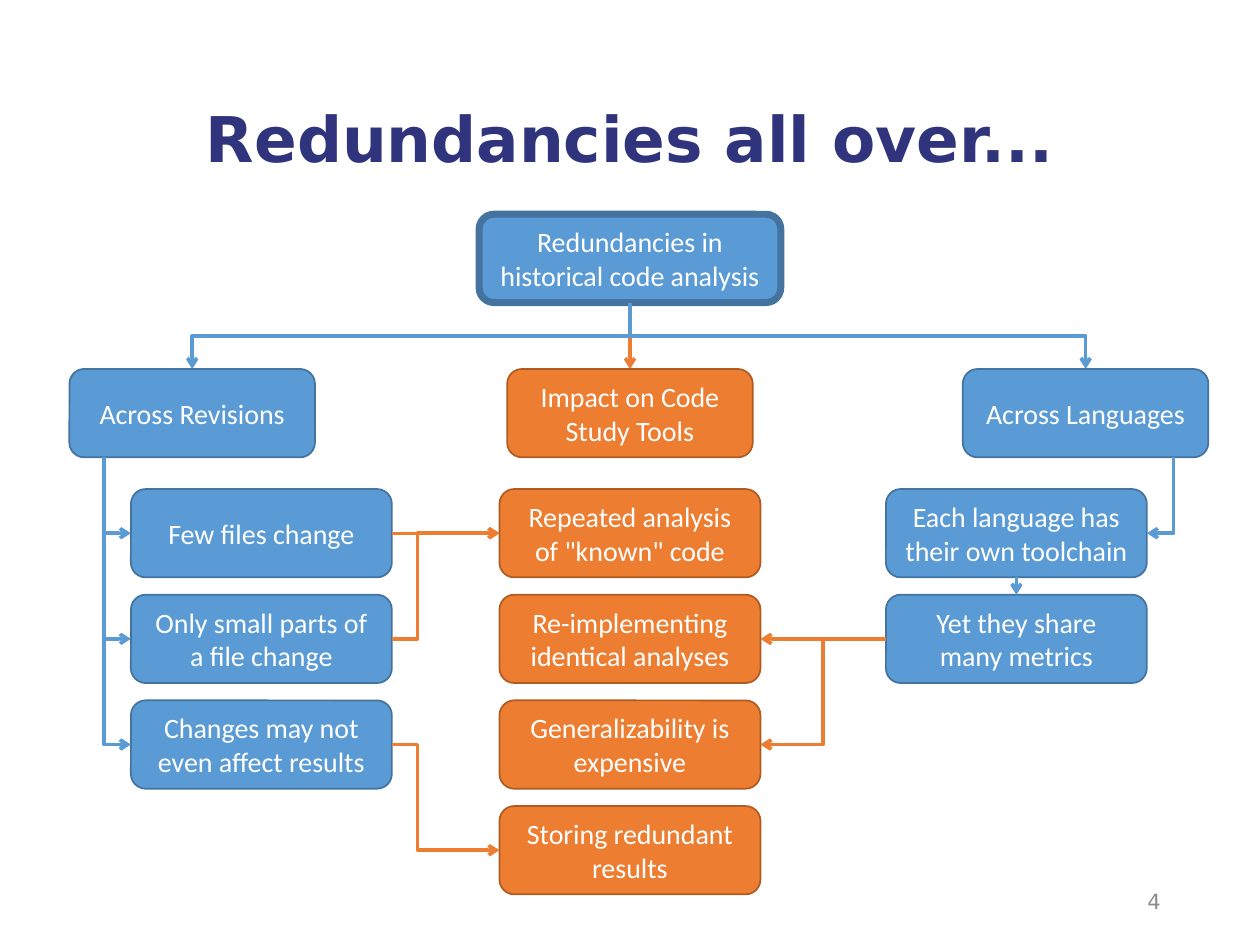
import pptx
import pptx.util
import pptx.dml.color
import pptx.enum.shapes
import pptx.enum.text
import pptx.oxml
import lxml.etree

Cm, Pt = pptx.util.Cm, pptx.util.Pt
RGBColor = pptx.dml.color.RGBColor
Align, Anchor = pptx.enum.text.PP_ALIGN, pptx.enum.text.MSO_ANCHOR
Kind = pptx.enum.shapes.MSO_CONNECTOR
ROUND = pptx.enum.shapes.MSO_SHAPE.ROUNDED_RECTANGLE

BLUE, NAVY = RGBColor(0x5B, 0x9B, 0xD5), RGBColor(0x43, 0x73, 0x9E)
ORANGE, RUST = RGBColor(0xED, 0x7D, 0x31), RGBColor(0xAF, 0x5C, 0x24)
INK, GREY = RGBColor(0x2F, 0x34, 0x7D), RGBColor(0x8C, 0x8C, 0x8C)
WHITE = RGBColor(0xFF, 0xFF, 0xFF)

HIGH, WIDE, HEAD = 1.78, 5.26, 4.95
FIRST, STEP = 2.42, 2.13
TOP = 7.44


def write(shape, text, size, font, color, align, bold=False):
    """Fill a shape with one centred-height run of text."""
    frame = shape.text_frame
    frame.word_wrap = True
    frame.vertical_anchor = Anchor.MIDDLE
    para = frame.paragraphs[0]
    para.alignment = align
    run = para.add_run()
    run.text = text
    run.font.size, run.font.name, run.font.bold = Pt(size), font, bold
    run.font.color.rgb = color
    return para


def label(shapes, box, *style, **more):
    """Place a plain text box."""
    return write(shapes.add_textbox(*map(Cm, box)), *style, **more)


def node(shapes, box, text, fill, edge, width=1):
    """Place one rounded box with its text."""
    shape = shapes.add_shape(ROUND, *map(Cm, box))
    shape.shadow.inherit = False
    shape.fill.solid()
    shape.fill.fore_color.rgb = fill
    shape.line.color.rgb = edge
    shape.line.width = Pt(width)
    write(shape, text, 16, "Calibri", WHITE, Align.CENTER)


def finish(link, color):
    """Give a connector its colour, arrowhead and flat look."""
    link.line.color.rgb = color
    link.line.width = Pt(2)
    tail = pptx.oxml.parse_xml(
        '<a:tailEnd xmlns:a="http://schemas.openxmlformats.org/'
        'drawingml/2006/main" type="arrow"/>')
    link.line._get_or_add_ln().append(tail)
    lxml.etree.SubElement(link.element.spPr, pptx.oxml.ns.qn("a:effectLst"))


def arrow(shapes, start, end, color):
    """Draw a straight arrow."""
    finish(shapes.add_connector(Kind.STRAIGHT, *map(Cm, start + end)), color)


def across(shapes, start, end, color, bend=0.5):
    """Draw an elbow arrow that leaves sideways."""
    link = shapes.add_connector(Kind.ELBOW, *map(Cm, start + end))
    guide = lxml.etree.SubElement(
        link.element.spPr.prstGeom.avLst, pptx.oxml.ns.qn("a:gd"))
    guide.set("name", "adj1")
    guide.set("fmla", f"val {round(bend * 100000)}")
    finish(link, color)


def down(shapes, start, end, color, single=False):
    """Draw an elbow arrow that leaves downwards, with one or two bends."""
    (ax, ay), (bx, by) = start, end
    midx, midy = (ax + bx) / 2, (ay + by) / 2
    half, rise = (by - ay) / 2, abs(bx - ax) / 2
    side = 1 if bx < ax else -1
    link = shapes.add_connector(
        Kind.ELBOW, Cm(midx - side * half), Cm(midy - rise),
        Cm(midx + side * half), Cm(midy + rise))
    geom = link.element.spPr
    geom.xfrm.set("rot", str((90 if side > 0 else 270) * 60000))
    if single:
        geom.prstGeom.set("prst", "bentConnector2")
    finish(link, color)


def column(shapes, box, head, items, shift, fill, edge):
    """Place a heading and its items; shift is 0 left, 0.5 centre, 1 right."""
    left, top, width = box
    place = left + shift * (width - HEAD)
    node(shapes, (place, top, HEAD, HIGH), head, fill, edge)
    inner = left + (1 - shift) * (width - WIDE)
    for i, text in enumerate(items):
        spot = (inner, top + FIRST + i * STEP, WIDE, HIGH)
        node(shapes, spot, text, fill, edge)


def trunk(shapes, box, ends):
    """Place the root box and its arrows to the three headings."""
    left, top, width, high = box
    node(shapes, box, "Redundancies in historical code analysis", BLUE, NAVY, 4)
    start = (left + width / 2, top + high)
    arrow(shapes, start, (start[0], TOP), ORANGE)
    for end in ends:
        down(shapes, start, (end, TOP), BLUE)


def stems(shapes, start, edge, rows):
    """Draw arrows from a heading down to the edge of its items."""
    for row in rows:
        down(shapes, start, (edge, row), BLUE, single=True)


def effects(shapes, left, mid, right, rows):
    """Draw the orange arrows into the middle column."""
    out, back = left + WIDE, mid + WIDE
    arrow(shapes, (out, rows[0]), (mid, rows[0]), ORANGE)
    across(shapes, (out, rows[1]), (mid, rows[0]), ORANGE, 0.24)
    across(shapes, (out, rows[2]), (mid, rows[3]), ORANGE, 0.24)
    arrow(shapes, (right, rows[1]), (back, rows[1]), ORANGE)
    across(shapes, (right, rows[1]), (back, rows[2]), ORANGE)


def main():
    """Build and save the slide."""
    deck = pptx.Presentation()
    deck.slide_width, deck.slide_height = Cm(25.4), Cm(19.05)
    shapes = deck.slides.add_slide(deck.slide_layouts[6]).shapes
    title = label(shapes, (1.75, 1.02, 21.9, 3.68), "Redundancies all over...",
                  36, "DejaVu Sans", INK, Align.CENTER, bold=True)
    title.line_spacing = 0.9

    span = 6.5
    west, mid, east = 1.4, 10.07, 17.86
    rows = [TOP + FIRST + HIGH / 2 + i * STEP for i in range(4)]
    base = TOP + HIGH
    trunk(shapes, (9.66, 4.32, 6.08, HIGH),
          (west + HEAD / 2, east + span - HEAD / 2))
    column(shapes, (west, TOP, span), "Across Revisions",
           ("Few files change", "Only small parts of a file change",
            "Changes may not even affect results"), 0, BLUE, NAVY)
    column(shapes, (mid, TOP, WIDE), "Impact on Code Study Tools",
           ("Repeated analysis of \"known\" code",
            "Re-implementing identical analyses",
            "Generalizability is expensive",
            "Storing redundant results"), 0.5, ORANGE, RUST)
    column(shapes, (east, TOP, span), "Across Languages",
           ("Each language has their own toolchain",
            "Yet they share many metrics"), 1, BLUE, NAVY)

    inner = west + span - WIDE
    stems(shapes, (west + 0.7, base), inner, rows[:3])
    stems(shapes, (east + span - 0.7, base), east + WIDE, rows[:1])
    center, half = east + WIDE / 2, HIGH / 2
    arrow(shapes, (center, rows[0] + half), (center, rows[1] - half), BLUE)
    effects(shapes, inner, mid, east, rows)
    label(shapes, (17.93, 17.65, 5.72, 1.02), "4", 12, "DejaVu Sans", GREY,
          Align.RIGHT)
    deck.save("out.pptx")


if __name__ == "__main__":
    main()
